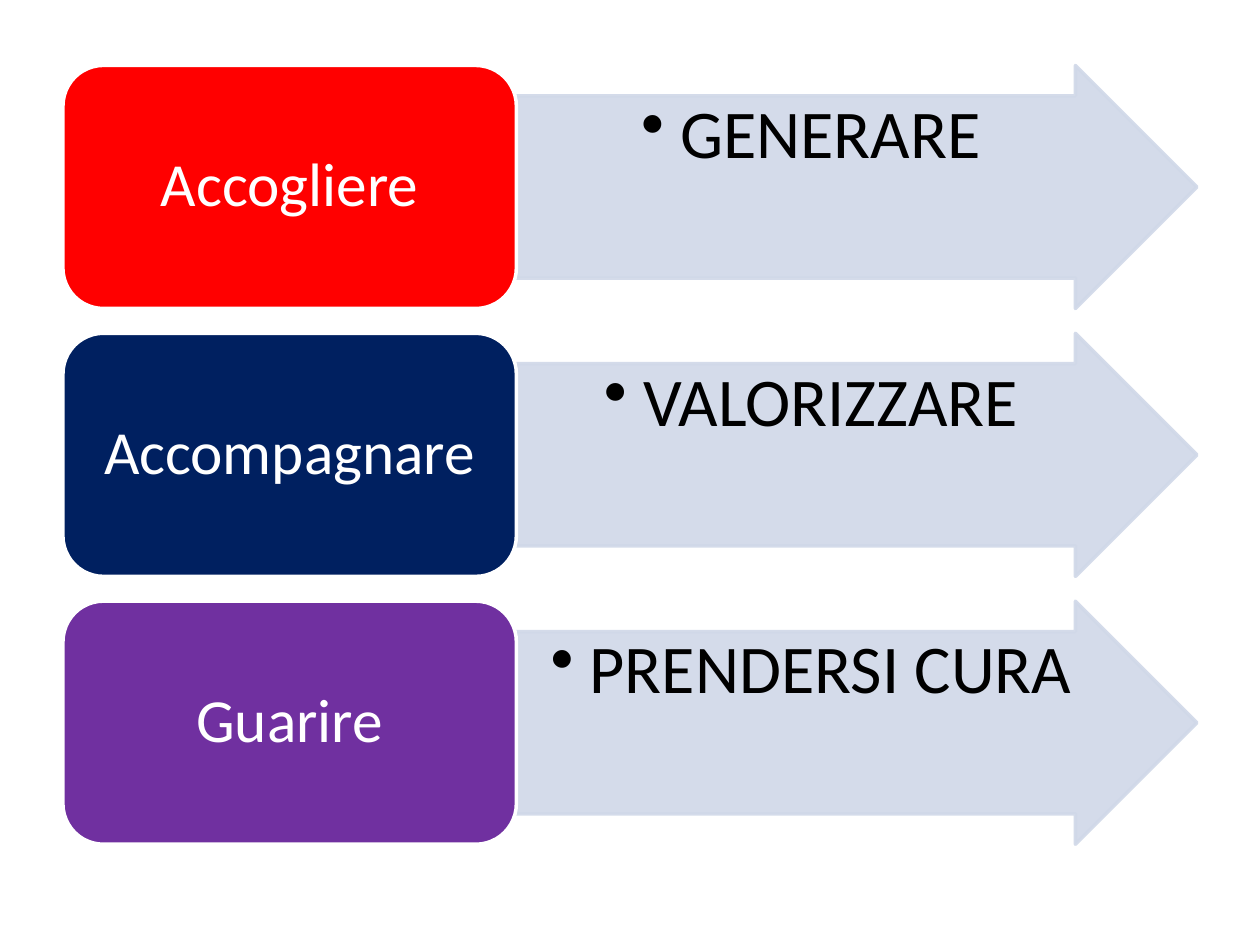
"""Build a slide pairing three coloured actions with the arrows they lead to."""
from dataclasses import dataclass

from lxml import etree
from pptx import Presentation
from pptx.dml.color import RGBColor
from pptx.enum import shapes, text
from pptx.oxml import ns
from pptx.util import Cm, Pt

FONT = "Calibri"
ARROW_COLOUR = "D0D8E8"
LEFT, TOP = 1.27, 1.32
ACTION_WIDTH, ARROW_WIDTH = 9.14, 13.72
ROW_HEIGHT, ROW_PITCH = 4.9, 5.4


@dataclass(frozen=True)
class Step:
    action: str
    outcome: str
    colour: str


STEPS = [
    Step("Accogliere", "GENERARE", "FF0000"),
    Step("Accompagnare", "VALORIZZARE", "002060"),
    Step("Guarire", "PRENDERSI CURA", "7030A0"),
]


def add_xml(parent, tag: str, **attributes: str):
    return etree.SubElement(parent, ns.qn(tag), attributes)


def paint(fill, colour: str, alpha: int = 100) -> None:
    fill.solid()
    fill.fore_color.rgb = RGBColor.from_string(colour)
    if alpha < 100:
        rgb = fill._xPr.find(".//" + ns.qn("a:solidFill"))[0]
        add_xml(rgb, "a:alpha", val=str(alpha * 1000))


def add_block(slide, preset, left: float, top: float, width: float,
              fill: str, line: str, alpha: int = 100):
    block = slide.shapes.add_shape(
        preset, Cm(left), Cm(top), Cm(width), Cm(ROW_HEIGHT))
    block.shadow.inherit = False
    paint(block.fill, fill, alpha)
    paint(block.line.fill, line, alpha)
    block.line.width = Pt(2)
    return block


def write(block, words: str, *, size: int, colour: str, anchor,
          margins: tuple[float, float], after: int, bullet: bool = False) -> None:
    frame = block.text_frame
    frame.word_wrap = True
    frame.vertical_anchor = anchor
    frame.margin_left = frame.margin_right = Cm(margins[0])
    frame.margin_top = frame.margin_bottom = Cm(margins[1])

    paragraph = frame.paragraphs[0]
    paragraph.alignment = text.PP_ALIGN.CENTER
    paragraph.line_spacing = 0.9
    properties = paragraph._p.get_or_add_pPr()
    spacing = add_xml(properties, "a:spcAft")
    add_xml(spacing, "a:spcPct", val=str(after * 1000))
    if bullet:
        paragraph.level = 1
        indent = Cm(0.79)
        properties.set("marL", str(indent))
        properties.set("indent", str(-indent))
        add_xml(properties, "a:buChar", char="•")

    run = paragraph.add_run()
    run.text = words
    run.font.name = FONT
    run.font.size = Pt(size)
    paint(run.font.fill, colour)


def add_step(slide, step: Step, top: float) -> None:
    arrow = add_block(slide, shapes.MSO_SHAPE.RIGHT_ARROW, LEFT + ACTION_WIDTH,
                      top, ARROW_WIDTH, ARROW_COLOUR, ARROW_COLOUR, alpha=90)
    arrow.adjustments[0] = 0.75
    arrow.adjustments[1] = 0.5
    write(arrow, step.outcome, size=39, colour="000000",
          anchor=text.MSO_ANCHOR.TOP, margins=(0.07, 0.07), after=15, bullet=True)

    action = add_block(slide, shapes.MSO_SHAPE.ROUNDED_RECTANGLE, LEFT,
                       top, ACTION_WIDTH, step.colour, "FFFFFF")
    write(action, step.action, size=35, colour="FFFFFF",
          anchor=text.MSO_ANCHOR.MIDDLE, margins=(0.37, 0.19), after=35)


def main() -> None:
    deck = Presentation()
    deck.slide_width, deck.slide_height = Cm(25.4), Cm(19.05)
    slide = deck.slides.add_slide(deck.slide_layouts[6])
    for row, step in enumerate(STEPS):
        add_step(slide, step, TOP + row * ROW_PITCH)
    deck.save("out.pptx")


if __name__ == "__main__":
    main()
